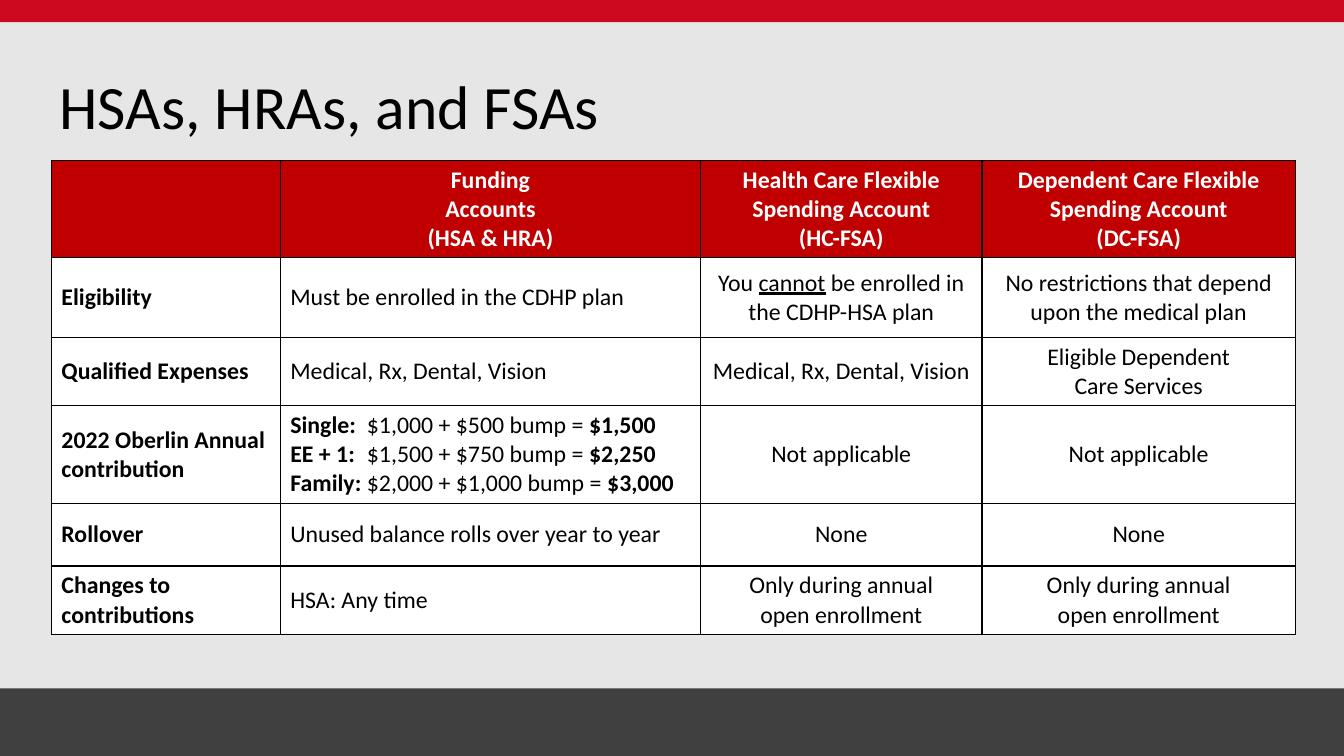
from dataclasses import dataclass
from lxml import etree
from pptx import Presentation
from pptx.dml.color import RGBColor
from pptx.enum import shapes, text
from pptx.oxml.ns import qn
from pptx.util import Inches, Pt


@dataclass(frozen=True)
class Theme:
    font: str = "Calibri"
    title: int = 44
    body: int = 17
    back: str = "E7E6E6"
    band: str = "CD0920"
    foot: str = "404040"
    head: str = "C00000"
    white: str = "FFFFFF"
    black: str = "000000"


THEME = Theme()
TITLE = "HSAs, HRAs, and FSAs"


def fund(who, parts, total):
    return [(who + "\t", "b"), (parts + " = ", ""), (total, "b")]


# A cell is a list of lines; a line is plain text or a list of (text, style).
ANNUAL = ["Only during annual", "open enrollment"]
ROWS = [
    [[""],
     ["Funding", "Accounts", "(HSA & HRA)"],
     ["Health Care Flexible Spending Account", "(HC-FSA)"],
     ["Dependent Care Flexible Spending Account", "(DC-FSA)"]],
    [["Eligibility"],
     ["Must be enrolled in the CDHP plan"],
     [[("You ", ""), ("cannot", "u"), (" be enrolled in the CDHP-HSA plan", "")]],
     ["No restrictions that depend upon the medical plan"]],
    [["Qualified Expenses"],
     ["Medical, Rx, Dental, Vision"],
     ["Medical, Rx, Dental, Vision"],
     ["Eligible Dependent", "Care Services"]],
    [["2022 Oberlin Annual contribution"],
     [fund("Single:", "$1,000 + $500 bump", "$1,500"),
      fund("EE + 1:", "$1,500 + $750 bump", "$2,250"),
      fund("Family:", "$2,000 + $1,000 bump", "$3,000")],
     ["Not applicable"],
     ["Not applicable"]],
    [["Rollover"], ["Unused balance rolls over year to year"], ["None"], ["None"]],
    [["Changes to contributions"], ["HSA: Any time"], ANNUAL, ANNUAL],
]
WIDTHS = [2.27, 4.17, 2.79, 3.11]
HEIGHTS = [0.96, 0.79, 0.68, 0.97, 0.62, 0.68]
BANDS = [(0, 0.22, THEME.band), (6.83, 0.67, THEME.foot)]
TAB = 0.76


def paint(fill, color):
    fill.solid()
    fill.fore_color.rgb = RGBColor.from_string(color)


def style(font, size, color, bold=False):
    font.name, font.size, font.bold = THEME.font, Pt(size), bold
    font.color.rgb = RGBColor.from_string(color)


def border(cell):
    """Put a thin black line on all four sides, ahead of the cell's fill."""
    props = cell._tc.get_or_add_tcPr()
    for i, side in enumerate(("lnL", "lnR", "lnT", "lnB")):
        line = etree.Element(qn("a:" + side), w=str(Pt(1)))
        fill = etree.SubElement(line, qn("a:solidFill"))
        etree.SubElement(fill, qn("a:srgbClr"), val=THEME.black)
        props.insert(i, line)


def add_tab(para):
    tabs = etree.SubElement(para._p.get_or_add_pPr(), qn("a:tabLst"))
    etree.SubElement(tabs, qn("a:tab"), pos=str(Inches(TAB)), algn="l")


def write(cell, lines, row, col):
    head = row == 0
    paint(cell.fill, THEME.head if head else THEME.white)
    border(cell)
    cell.vertical_anchor = text.MSO_ANCHOR.TOP if head else text.MSO_ANCHOR.MIDDLE
    frame = cell.text_frame
    for i, line in enumerate(lines):
        para = frame.add_paragraph() if i else frame.paragraphs[0]
        if head or col > 1:
            para.alignment = text.PP_ALIGN.CENTER
        runs = [(line, "")] if isinstance(line, str) else line
        if any("\t" in words for words, _ in runs):
            add_tab(para)
        style(para.font, THEME.body, THEME.white if head else THEME.black,
              head or col == 0)
        for words, mark in runs:
            run = para.add_run()
            run.text = words
            if mark == "b":
                run.font.bold = True
            elif mark == "u":
                run.font.underline = True


def main():
    deck = Presentation()
    deck.slide_width, deck.slide_height = Inches(13.33), Inches(7.5)
    slide = deck.slides.add_slide(deck.slide_layouts[5])
    paint(slide.background.fill, THEME.back)

    for top, tall, color in BANDS:
        band = slide.shapes.add_shape(shapes.MSO_SHAPE.RECTANGLE, 0, Inches(top),
                                      deck.slide_width, Inches(tall))
        band.shadow.inherit = False
        paint(band.fill, color)
        band.line.fill.background()

    title = slide.shapes.title
    title.left, title.top = Inches(0.49), Inches(0.45)
    title.width, title.height = Inches(11.5), Inches(1.27)
    frame = title.text_frame
    frame.text = TITLE
    frame.auto_size = text.MSO_AUTO_SIZE.NONE
    frame.vertical_anchor = text.MSO_ANCHOR.MIDDLE
    para = frame.paragraphs[0]
    para.alignment = text.PP_ALIGN.LEFT
    para.line_spacing = 0.9
    style(para.font, THEME.title, THEME.black)

    grid = slide.shapes.add_table(len(ROWS), len(WIDTHS), Inches(0.51), Inches(1.59),
                                  Inches(sum(WIDTHS)), Inches(sum(HEIGHTS))).table
    for col, wide in zip(grid.columns, WIDTHS):
        col.width = Inches(wide)
    for row, tall in zip(grid.rows, HEIGHTS):
        row.height = Inches(tall)
    for r, cells in enumerate(ROWS):
        for c, lines in enumerate(cells):
            write(grid.cell(r, c), lines, r, c)

    deck.save("out.pptx")


if __name__ == "__main__":
    main()
